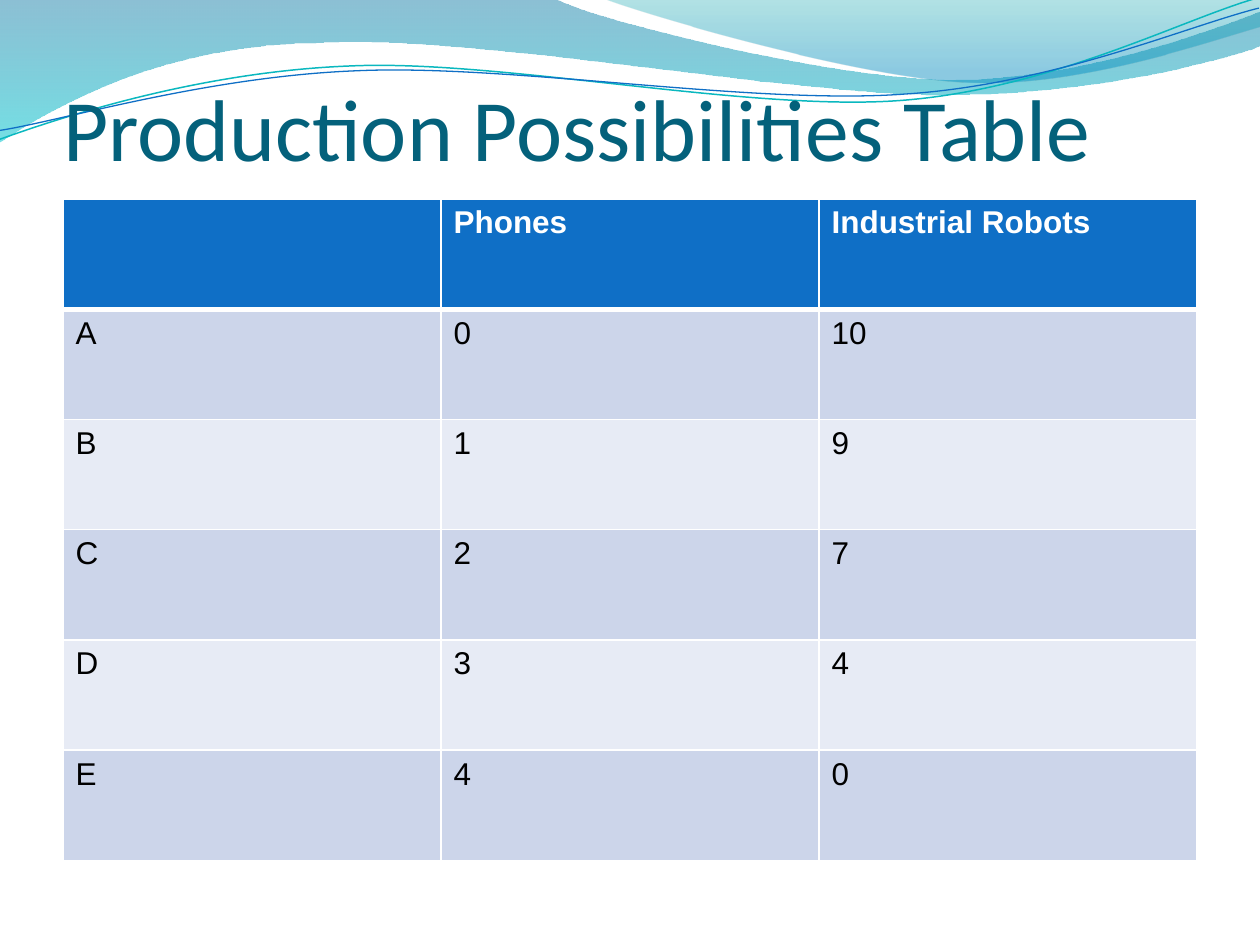
from lxml import etree
from pptx import Presentation
from pptx.dml.color import RGBColor
from pptx.enum.text import MSO_ANCHOR, MSO_AUTO_SIZE, PP_ALIGN
from pptx.oxml.ns import qn
from pptx.util import Inches, Pt

BOTTOM = MSO_ANCHOR.BOTTOM
LEFT = PP_ALIGN.LEFT
FIXED = MSO_AUTO_SIZE.NONE
TITLE_ONLY = 5
TILT = 357.3

COLORS = {
    "title": "04617B", "head": "0F6FC6", "odd": "CCD5EA", "even": "E7EBF5",
    "white": "FFFFFF", "black": "000000", "teal": "0AB8BF",
    "deep": "0074A1", "aqua": "00C6CF", "sea": "00A1A9", "sky": "008BBF",
}

BAND = [
    (0, -0.01), (4.4, -0.01),
    (4.76, 0.17, 6.64, 0.63, 7.58, 0.63), (8.53, 0.63, 9.58, 0.26, 10, 0.09),
    (10.01, 0.36),
    (9.83, 0.44, 8.7, 0.76, 7.46, 0.75), (6.22, 0.75, 3.82, 0.28, 2.57, 0.34),
    (1.29, 0.35, 0.46, 0.83, -0.01, 1.13),
]
CREST = [
    (4.79, -0.01),
    (5.09, 0.11, 6.82, 0.62, 7.69, 0.65), (8.56, 0.69, 9.61, 0.32, 10, 0.21),
    (10, 0),
]
UPPER = [
    (-0.02, 0.87),
    (0.47, 0.72, 1.58, 0.41, 2.78, 0.42), (3.96, 0.42, 5.91, 0.93, 7.12, 0.9),
    (8.32, 0.87, 9.4, 0.36, 10, 0.22),
]
LOWER = [
    (-0.02, 0.8),
    (0.46, 0.75, 1.64, 0.45, 2.83, 0.46), (4.03, 0.46, 5.96, 0.88, 7.16, 0.85),
    (8.35, 0.83, 9.42, 0.42, 10.01, 0.3),
]
ROWS = [
    ("", "Phones", "Industrial Robots"),
    ("A", "0", "10"),
    ("B", "1", "9"),
    ("C", "2", "7"),
    ("D", "3", "4"),
    ("E", "4", "0"),
]


def color(name):
    return RGBColor.from_string(COLORS[name])


class Deck:
    def __init__(self, cols=10, rows=7.5):
        self.prs = Presentation()
        self.prs.slide_width, self.prs.slide_height = Inches(cols), Inches(rows)
        self.slide = self.prs.slides.add_slide(self.prs.slide_layouts[TITLE_ONLY])

    def curve(self, path, closed):
        points = [(Inches(x), Inches(y)) for part in path
                  for x, y in zip(part[::2], part[1::2])]
        form = self.slide.shapes.build_freeform(*points[0])
        form.add_line_segments(points[1:], close=closed)
        shape = form.convert_to_shape()
        shape.shadow.inherit = False
        lines = iter(list(shape._element.spPr.iter(qn("a:lnTo"))))
        for part in path[1:]:
            first = next(lines)
            if len(part) == 2:
                continue
            bend = etree.Element(qn("a:cubicBezTo"))
            first.addprevious(bend)
            for line in (first, next(lines), next(lines)):
                bend.append(line[0])
                line.getparent().remove(line)
        return shape

    def wave(self, path, stops):
        shape = self.curve(path, True)
        shape.line.fill.background()
        shape.fill.gradient()
        shape.fill.gradient_angle = 270
        for stop, (place, name, _) in zip(shape.fill.gradient_stops, stops):
            stop.position = place
            stop.color.rgb = color(name)
        tints = shape._element.spPr.iter(qn("a:srgbClr"))
        for tint, (_, _, alpha) in zip(tints, stops):
            etree.SubElement(tint, qn("a:alpha"), val=str(alpha * 1000))

    def thread(self, path, name, width):
        shape = self.curve(path, False)
        shape.rotation = TILT
        shape.fill.background()
        shape.line.color.rgb = color(name)
        shape.line.width = Pt(width)

    def style(self, para, face, size, name, bold=False):
        para.alignment = LEFT
        for run in para.runs:
            run.font.name, run.font.size = face, Pt(size)
            run.font.bold = bold
            run.font.color.rgb = color(name)

    def title(self, text, left, top, width, height):
        shape = self.slide.shapes.title
        shape.left, shape.top = Inches(left), Inches(top)
        shape.width, shape.height = Inches(width), Inches(height)
        frame = shape.text_frame
        frame.text = text
        frame.auto_size, frame.word_wrap = FIXED, True
        frame.vertical_anchor = BOTTOM
        frame.margin_left = frame.margin_right = frame.margin_bottom = 0
        frame.margin_top = Inches(0.05)
        self.style(frame.paragraphs[0], "Calibri", 50, "title")
        self.slide.shapes._spTree.append(shape._element)

    def border(self, cell, row):
        props = cell._tc.get_or_add_tcPr()
        widths = {"L": 1, "R": 1, "T": 3 if row == 1 else 1, "B": 3 if row == 0 else 1}
        for side, width in widths.items():
            line = etree.SubElement(props, qn("a:ln" + side), w=str(Pt(width)))
            fill = etree.SubElement(line, qn("a:solidFill"))
            etree.SubElement(fill, qn("a:srgbClr"), val=COLORS["white"])

    def table(self, rows, left, top, width, height):
        frame = self.slide.shapes.add_table(
            len(rows), len(rows[0]),
            Inches(left), Inches(top), Inches(width), Inches(height))
        for r, texts in enumerate(rows):
            head = r == 0
            back = "head" if head else "odd" if r % 2 else "even"
            for c, text in enumerate(texts):
                cell = frame.table.cell(r, c)
                self.border(cell, r)
                cell.fill.solid()
                cell.fill.fore_color.rgb = color(back)
                cell.text_frame.text = text
                self.style(cell.text_frame.paragraphs[0], "Arial", 18,
                           "white" if head else "black", head)


def main():
    deck = Deck()
    deck.wave(BAND, [(0, "deep", 45), (1, "aqua", 55)])
    deck.wave(CREST, [(0, "sea", 30), (0.8, "sky", 45)])
    deck.thread(UPPER, "teal", 0.85)
    deck.thread(LOWER, "head", 0.75)
    deck.title("Production Possibilities Table", 0.5, 0.17, 9, 1.25)
    deck.table(ROWS, 0.5, 1.58, 9, 5.25)
    deck.prs.save("out.pptx")


if __name__ == "__main__":
    main()
